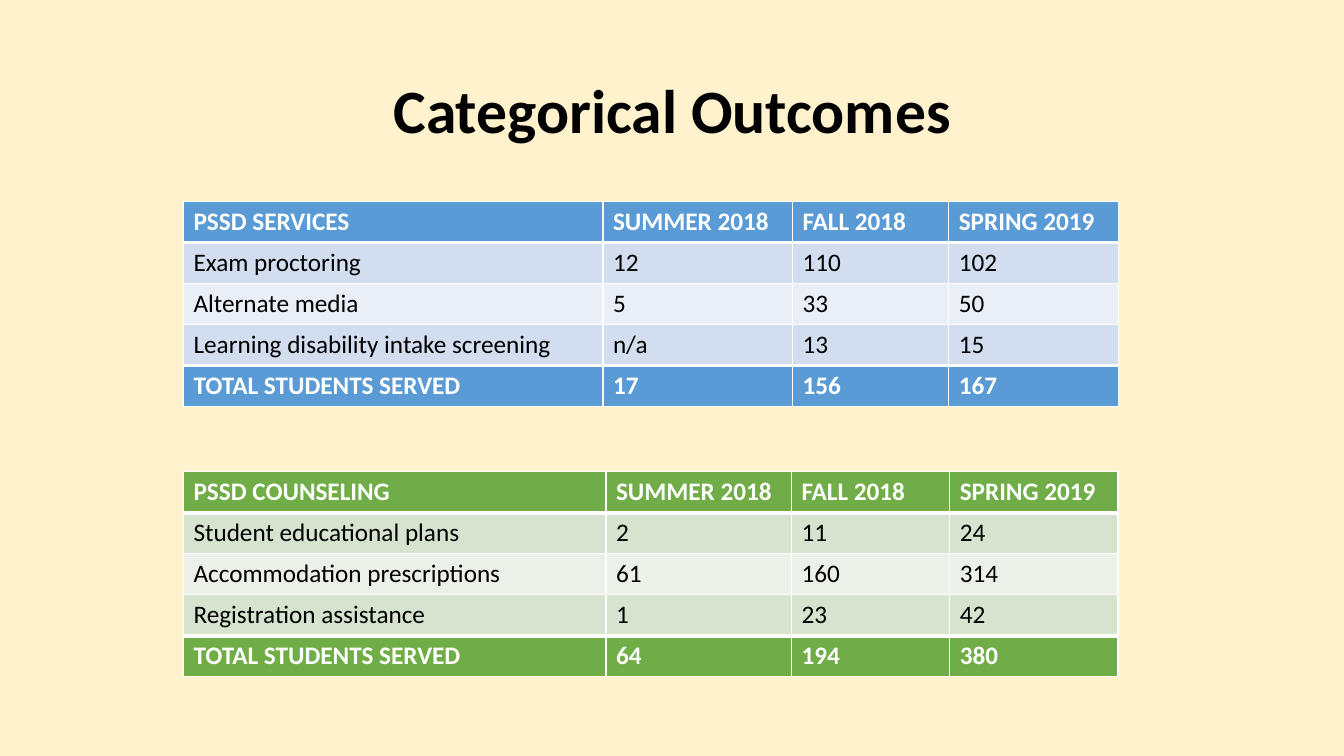
from lxml import etree
from pptx import Presentation, util as u
from pptx.dml.color import RGBColor
from pptx.enum import text
from pptx.oxml.ns import qn

WIDE, HIGH = 13.33, 7.5
FONT = "Calibri"
LEFT, ROW = 1.82, 0.407
EDGES = [1, 3, 1, 1, 3, 1]  # points, the rules from top to bottom
HUES = {
    "page": "FFF2CC", "ink": "000000", "white": "FFFFFF",
    "blue": "5B9BD5", "blue_mid": "D2DEEF", "blue_pale": "EAEFF7",
    "green": "70AD47", "green_mid": "D5E3CF", "green_pale": "EBF1E9",
}
TERMS = ["SUMMER 2018", "FALL 2018", "SPRING 2019"]
TOTAL = "TOTAL STUDENTS SERVED"
SERVICES = [
    ["PSSD SERVICES", *TERMS],
    ["Exam proctoring", "12", "110", "102"],
    ["Alternate media", "5", "33", "50"],
    ["Learning disability intake screening", "n/a", "13", "15"],
    [TOTAL, "17", "156", "167"],
]
COUNSELING = [
    ["PSSD COUNSELING", *TERMS],
    ["Student educational plans", "2", "11", "24"],
    ["Accommodation prescriptions", "61", "160", "314"],
    ["Registration assistance", "1", "23", "42"],
    [TOTAL, "64", "194", "380"],
]


def color(name):
    return RGBColor.from_string(HUES[name])


def style(para, size, hue, bold):
    font = para.font
    font.name, font.size, font.bold = FONT, u.Pt(size), bold
    font.color.rgb = color(hue)


def add_title(slide, words):
    title = slide.shapes.title
    title.left, title.top = u.Inches(0.92), u.Inches(0.4)
    title.width, title.height = u.Inches(11.5), u.Inches(1.45)
    frame = title.text_frame
    frame.text = words
    frame.vertical_anchor = text.MSO_ANCHOR.MIDDLE
    para = frame.paragraphs[0]
    para.alignment = text.PP_ALIGN.CENTER
    para.line_spacing = 0.9
    style(para, 44, "ink", True)


def rule(cell, top, bottom):
    """Draw white cell borders; this must precede the fill in the XML."""
    props = cell._tc.get_or_add_tcPr()
    for side, width in zip("LRTB", (1, 1, top, bottom)):
        line = etree.SubElement(props, qn(f"a:ln{side}"), w=str(u.Pt(width)))
        fill = etree.SubElement(line, qn("a:solidFill"))
        etree.SubElement(fill, qn("a:srgbClr"), val=HUES["white"])


def add_grid(slide, top, widths, rows, hue):
    frame = slide.shapes.add_table(
        len(rows), len(widths), u.Inches(LEFT), u.Inches(top),
        u.Inches(sum(widths)), u.Inches(ROW * len(rows)))
    table = frame.table
    table.last_row = True
    for col, width in zip(table.columns, widths):
        col.width = u.Inches(width)
    for r, row in enumerate(rows):
        table.rows[r].height = u.Inches(ROW)
        strong = r in (0, len(rows) - 1)
        shade = hue if strong else hue + ("_mid" if r % 2 else "_pale")
        for c, words in enumerate(row):
            cell = table.cell(r, c)
            rule(cell, EDGES[r], EDGES[r + 1])
            cell.fill.solid()
            cell.fill.fore_color.rgb = color(shade)
            cell.text = words
            style(cell.text_frame.paragraphs[0], 18,
                  "white" if strong else "ink", strong)


def main():
    deck = Presentation()
    deck.slide_width, deck.slide_height = u.Inches(WIDE), u.Inches(HIGH)
    slide = deck.slides.add_slide(deck.slide_layouts[5])
    slide.background.fill.solid()
    slide.background.fill.fore_color.rgb = color("page")
    add_title(slide, "Categorical Outcomes")
    add_grid(slide, 2, [4.16, 1.88, 1.55, 1.68], SERVICES, "blue")
    add_grid(slide, 4.68, [4.19, 1.84, 1.57, 1.67], COUNSELING, "green")
    deck.save("out.pptx")


if __name__ == "__main__":
    main()
